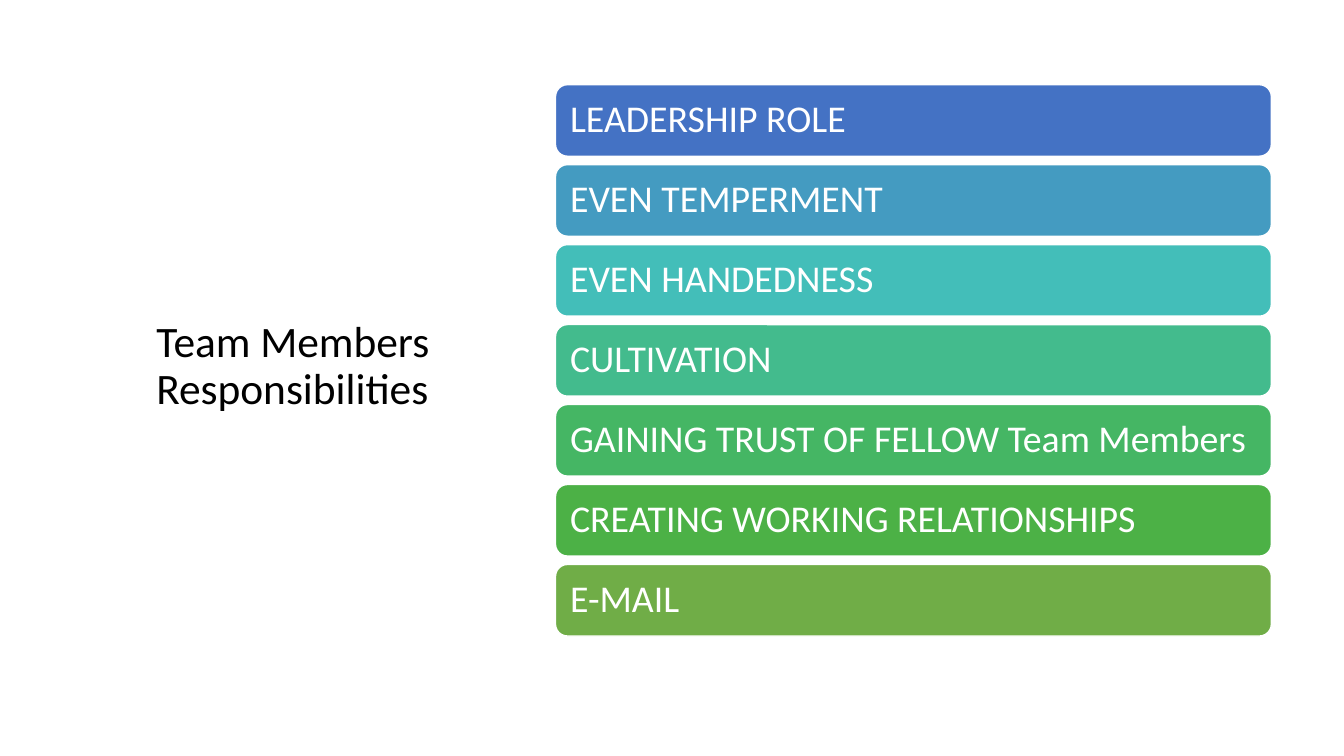
from pptx import Presentation
from pptx.dml.color import RGBColor
from pptx.enum.shapes import MSO_SHAPE
from pptx.enum.text import MSO_ANCHOR, MSO_AUTO_SIZE, PP_ALIGN
from pptx.util import Inches, Pt

ROUNDED = MSO_SHAPE.ROUNDED_RECTANGLE
MIDDLE = MSO_ANCHOR.MIDDLE
NO_AUTOFIT = MSO_AUTO_SIZE.NONE
LEFT = PP_ALIGN.LEFT
TITLE_ONLY = 5
FONT = "Calibri"
BAR_HEIGHT = 0.71
BAR_INSET = 0.11

COLORS = {
    "title": "000000",
    "white": "FFFFFF",
    "blue": "4472C4",
    "sky": "449BC1",
    "turquoise": "43BEB9",
    "sea": "43BB8D",
    "emerald": "45B664",
    "green": "4CB146",
    "olive": "70AD47",
}

RESPONSIBILITIES = [
    ("LEADERSHIP ROLE", "blue"),
    ("EVEN TEMPERMENT", "sky"),
    ("EVEN HANDEDNESS", "turquoise"),
    ("CULTIVATION", "sea"),
    ("GAINING TRUST OF FELLOW Team Members", "emerald"),
    ("CREATING WORKING RELATIONSHIPS", "green"),
    ("E-MAIL", "olive"),
]


def color(name):
    return RGBColor.from_string(COLORS[name])


def write_text(shape, text, size, color_name):
    frame = shape.text_frame
    frame.text = text
    frame.word_wrap = True
    frame.auto_size = NO_AUTOFIT
    frame.vertical_anchor = MIDDLE
    paragraph = frame.paragraphs[0]
    paragraph.alignment = LEFT
    paragraph.line_spacing = 0.9
    paragraph.font.name = FONT
    paragraph.font.size = Pt(size)
    paragraph.font.color.rgb = color(color_name)


def place_title(slide, left, top, width, height):
    title = slide.shapes.title
    title.left, title.top = Inches(left), Inches(top)
    title.width, title.height = Inches(width), Inches(height)
    write_text(title, "Team Members Responsibilities", 31, "title")


def add_bar(slide, text, fill, left, top, width):
    bar = slide.shapes.add_shape(
        ROUNDED, Inches(left), Inches(top), Inches(width), Inches(BAR_HEIGHT)
    )
    bar.shadow.inherit = False
    bar.fill.solid()
    bar.fill.fore_color.rgb = color(fill)
    bar.line.color.rgb = color("white")
    bar.line.width = Pt(1)
    write_text(bar, text, 27, "white")
    frame = bar.text_frame
    frame.margin_left = frame.margin_right = Inches(BAR_INSET)
    frame.margin_top = frame.margin_bottom = Inches(BAR_INSET)


def add_responsibilities(slide, left, top, width, height):
    step = (height - BAR_HEIGHT) / (len(RESPONSIBILITIES) - 1)
    for index, (text, fill) in enumerate(RESPONSIBILITIES):
        add_bar(slide, text, fill, left, top + index * step, width)


def main():
    presentation = Presentation()
    presentation.slide_width = Inches(13.33)
    presentation.slide_height = Inches(7.5)
    slide = presentation.slides.add_slide(presentation.slide_layouts[TITLE_ONLY])
    place_title(slide, 1.45, 1.67, 3.01, 3.94)
    add_responsibilities(slide, 5.51, 0.84, 7.1, 5.47)
    presentation.save("out.pptx")


if __name__ == "__main__":
    main()
